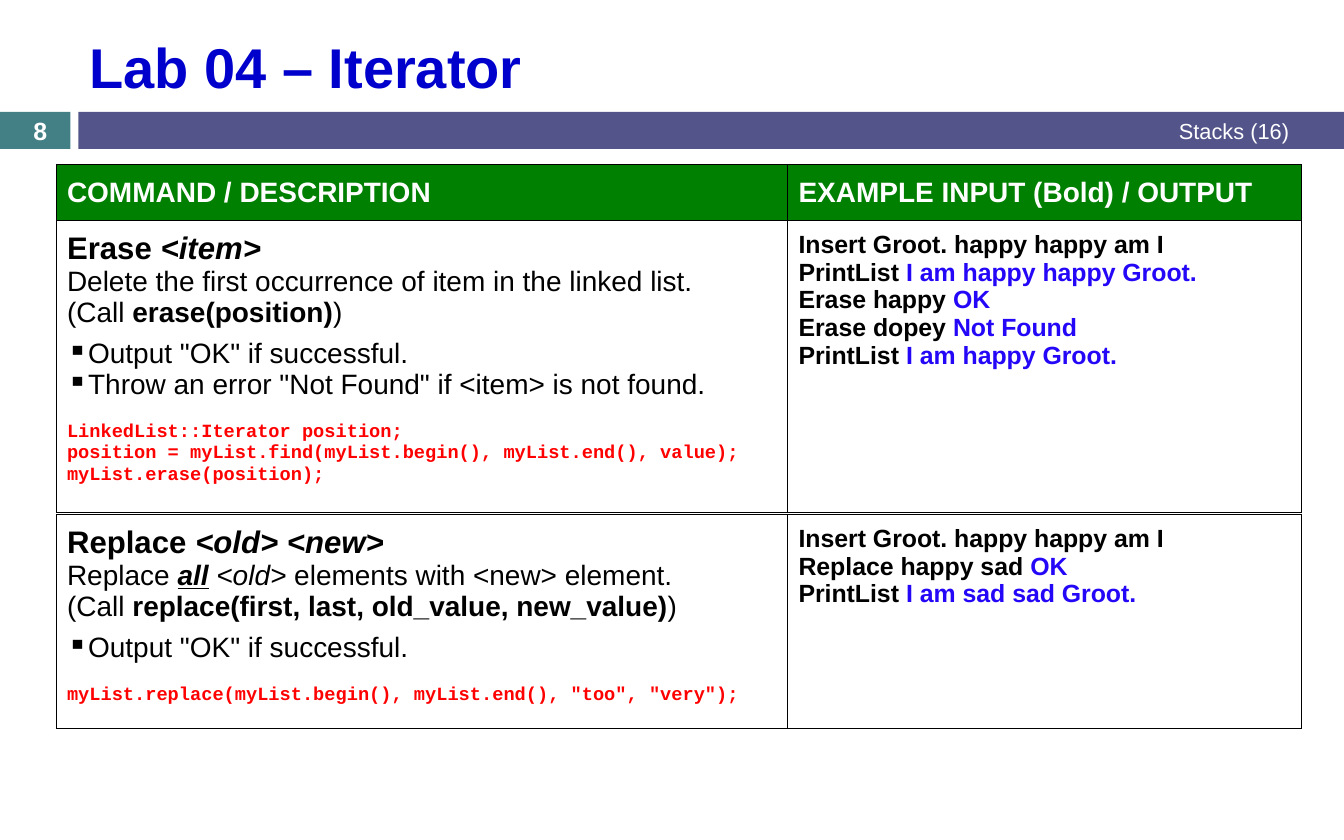
"""Build the slide on the Erase and Replace commands of the iterator lab."""
from lxml import etree
from pptx import Presentation
from pptx.dml.color import RGBColor
from pptx.enum.shapes import MSO_SHAPE
from pptx.enum.text import MSO_ANCHOR, PP_ALIGN
from pptx.oxml.ns import qn
from pptx.util import Cm, Pt

RECTANGLE = MSO_SHAPE.RECTANGLE
MIDDLE, TOP = MSO_ANCHOR.MIDDLE, MSO_ANCHOR.TOP
LEFT, CENTER, RIGHT = PP_ALIGN.LEFT, PP_ALIGN.CENTER, PP_ALIGN.RIGHT

BLACK, WHITE, BLUE, RED, GREEN = "000000", "FFFFFF", "2407F7", "FF0000", "008000"
NAVY, TEAL, PURPLE = "0000CC", "438086", "53548A"

BARS = [(0, 1.6, TEAL), (1.78, 28.7, PURPLE)]
BAR_TOP, BAR_HEIGHT = 2.54, 0.84

LABELS = [
    ("Lab 04 – Iterator", (1.78, 0.48, 27.71, 2.03), 36, NAVY, True, LEFT),
    ("Stacks (16)", (11.43, 2.52, 18.06, 0.89), 14, WHITE, False, RIGHT),
    ("8", (0, 2.57, 1.83, 0.76), 16, WHITE, True, CENTER),
]

PARAGRAPH_STYLES = {
    "header": dict(size=18, color=WHITE, bold=True),
    "command": dict(size=18, after=6),
    "bullet": dict(size=18, bullet=True),
    "code first": dict(size=12, color=RED, bold=True, font="Courier New", before=14),
    "code": dict(size=12, color=RED, bold=True, font="Courier New"),
    "example": dict(size=16, bold=True),
}
RUN_STYLES = {
    "name": dict(size=20, bold=True),
    "argument": dict(size=20, bold=True, italic=True),
    "bold": dict(bold=True),
    "italic": dict(italic=True),
    "stress": dict(bold=True, italic=True, underline=True),
    "output": dict(color=BLUE),
}

HEADER = [
    [("header", ["COMMAND / DESCRIPTION"])],
    [("header", ["EXAMPLE INPUT (Bold) / OUTPUT"])],
]
ERASE = [
    [
        ("command", [("Erase ", "name"), ("<item>", "argument"),
                     "\nDelete the first occurrence of item in the linked list.\n(Call ",
                     ("erase(position)", "bold"), ")"]),
        ("bullet", ['Output "OK" if successful.']),
        ("bullet", ['Throw an error "Not Found" if <item> is not found.']),
        ("code first", ["LinkedList::Iterator position;"]),
        ("code", ["position = myList.find(myList.begin(), myList.end(), value); "
                  "myList.erase(position);"]),
    ],
    [
        ("example", ["Insert Groot. happy happy am I"]),
        ("example", ["PrintList ", ("I am happy happy Groot.", "output")]),
        ("example", ["Erase happy ", ("OK", "output")]),
        ("example", ["Erase dopey ", ("Not Found", "output")]),
        ("example", ["PrintList ", ("I am happy Groot.", "output")]),
    ],
]
REPLACE = [
    [
        ("command", [("Replace ", "name"), ("<old> <new>", "argument"), "\nReplace ",
                     ("all", "stress"), " ", ("<old>", "italic"),
                     " elements with <new> element.\n(Call ",
                     ("replace(first, last, old_value, new_value)", "bold"), ")"]),
        ("bullet", ['Output "OK" if successful.']),
        ("code first", ['myList.replace(myList.begin(), myList.end(), "too", "very");']),
    ],
    [
        ("example", ["Insert Groot. happy happy am I"]),
        ("example", ["Replace happy sad ", ("OK", "output")]),
        ("example", ["PrintList ", ("I am sad sad Groot.", "output")]),
    ],
]
TABLES = [
    (3.73, [(1.22, GREEN, MIDDLE, HEADER), (6.26, WHITE, TOP, ERASE)]),
    (11.66, [(4.57, WHITE, TOP, REPLACE)]),
]
TABLE_LEFT, COLUMN_WIDTHS = 1.27, (16.59, 11.66)
INSET, BULLET_INDENT, BORDER_WIDTH = 0.25, 0.48, 0.3


def rgb(color):
    return RGBColor.from_string(color)


def set_font(font, size=None, color=None, bold=None, italic=None, underline=None, name=None):
    if size:
        font.size = Pt(size)
    if color:
        font.color.rgb = rgb(color)
    if name:
        font.name = name
    font.bold, font.italic, font.underline = bold, italic, underline


def add_bullet(paragraph):
    properties = paragraph._p.get_or_add_pPr()
    properties.set("marL", str(Cm(BULLET_INDENT)))
    properties.set("indent", str(-Cm(BULLET_INDENT)))
    bullet = etree.Element(qn("a:buChar"), char="▪")
    properties.insert_element_before(bullet, "a:tabLst", "a:defRPr", "a:extLst")


def write_paragraph(paragraph, style, runs):
    look = PARAGRAPH_STYLES[style]
    set_font(paragraph.font, look["size"], look.get("color", BLACK),
             look.get("bold", False), name=look.get("font", "Arial"))
    paragraph.space_before = Pt(look.get("before", 0))
    paragraph.space_after = Pt(look.get("after", 0))
    if look.get("bullet"):
        add_bullet(paragraph)
    for part in runs:
        text, run_style = (part, None) if isinstance(part, str) else part
        for number, line in enumerate(text.split("\n")):
            if number:
                paragraph.add_line_break()
            if line:
                run = paragraph.add_run()
                run.text = line
                if run_style:
                    set_font(run.font, **RUN_STYLES[run_style])


def add_borders(cell):
    properties = cell._tc.get_or_add_tcPr()
    for side in ("lnL", "lnR", "lnT", "lnB"):
        line = etree.SubElement(properties, qn(f"a:{side}"), w=str(Pt(BORDER_WIDTH)))
        fill = etree.SubElement(line, qn("a:solidFill"))
        etree.SubElement(fill, qn("a:srgbClr"), val=BLACK)


def fill_cell(cell, paragraphs, fill, anchor):
    add_borders(cell)
    cell.fill.solid()
    cell.fill.fore_color.rgb = rgb(fill)
    cell.vertical_anchor = anchor
    cell.margin_left = cell.margin_right = cell.margin_top = cell.margin_bottom = Cm(INSET)
    frame = cell.text_frame
    for number, (style, runs) in enumerate(paragraphs):
        paragraph = frame.add_paragraph() if number else frame.paragraphs[0]
        write_paragraph(paragraph, style, runs)


def add_command_table(slide, top, rows):
    height = sum(row[0] for row in rows)
    table = slide.shapes.add_table(
        len(rows), len(COLUMN_WIDTHS), Cm(TABLE_LEFT), Cm(top),
        Cm(sum(COLUMN_WIDTHS)), Cm(height)).table
    table.first_row = table.horz_banding = False
    for column, width in zip(table.columns, COLUMN_WIDTHS):
        column.width = Cm(width)
    for row, (row_height, fill, anchor, contents) in zip(table.rows, rows):
        row.height = Cm(row_height)
        for cell, paragraphs in zip(row.cells, contents):
            fill_cell(cell, paragraphs, fill, anchor)


def add_bar(slide, left, width, color):
    bar = slide.shapes.add_shape(RECTANGLE, Cm(left), Cm(BAR_TOP), Cm(width), Cm(BAR_HEIGHT))
    bar.shadow.inherit = False
    bar.fill.solid()
    bar.fill.fore_color.rgb = rgb(color)
    bar.line.fill.background()


def add_label(slide, text, box, size, color, bold, alignment):
    frame = slide.shapes.add_textbox(*map(Cm, box)).text_frame
    frame.word_wrap = True
    frame.vertical_anchor = MIDDLE
    paragraph = frame.paragraphs[0]
    paragraph.text = text
    paragraph.alignment = alignment
    set_font(paragraph.font, size, color, bold, name="Arial")


def main():
    deck = Presentation()
    deck.slide_width, deck.slide_height = Cm(30.48), Cm(19.05)
    slide = deck.slides.add_slide(deck.slide_layouts[6])
    for bar in BARS:
        add_bar(slide, *bar)
    for label in LABELS:
        add_label(slide, *label)
    for top, rows in TABLES:
        add_command_table(slide, top, rows)
    deck.save("out.pptx")


if __name__ == "__main__":
    main()
